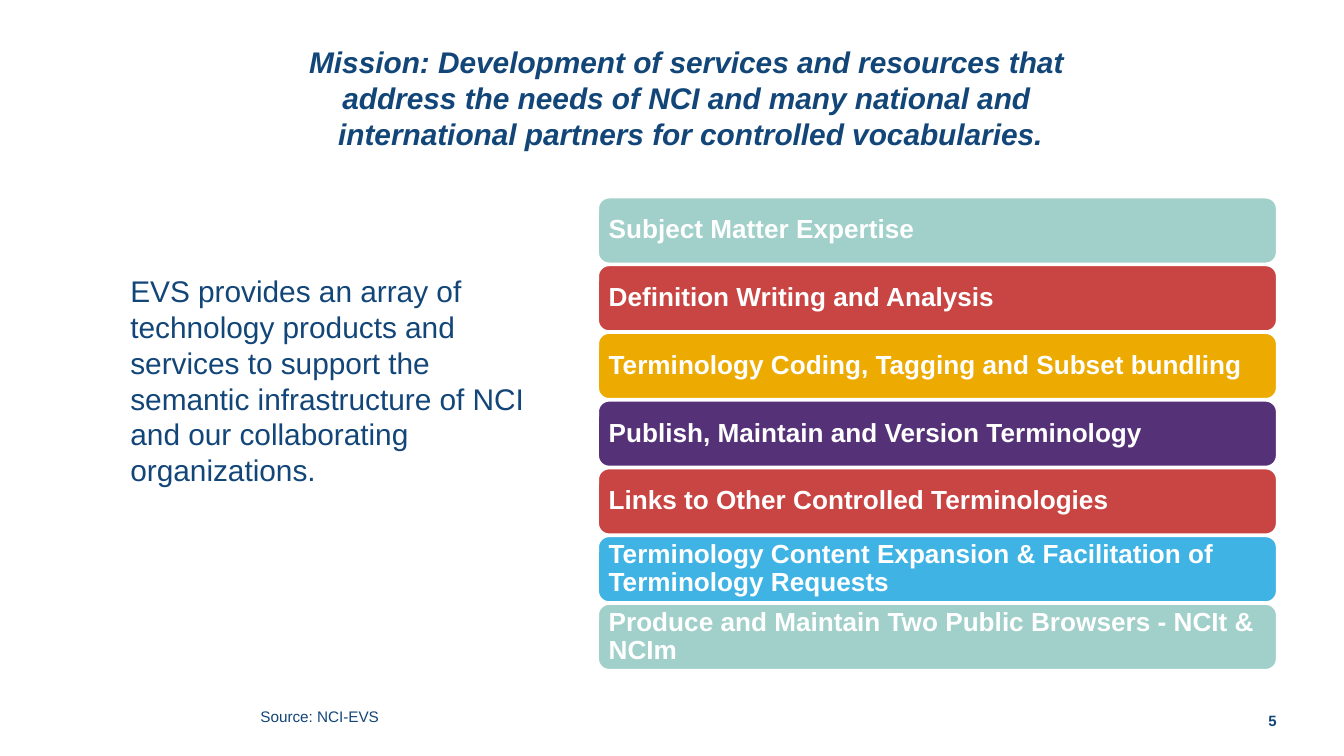
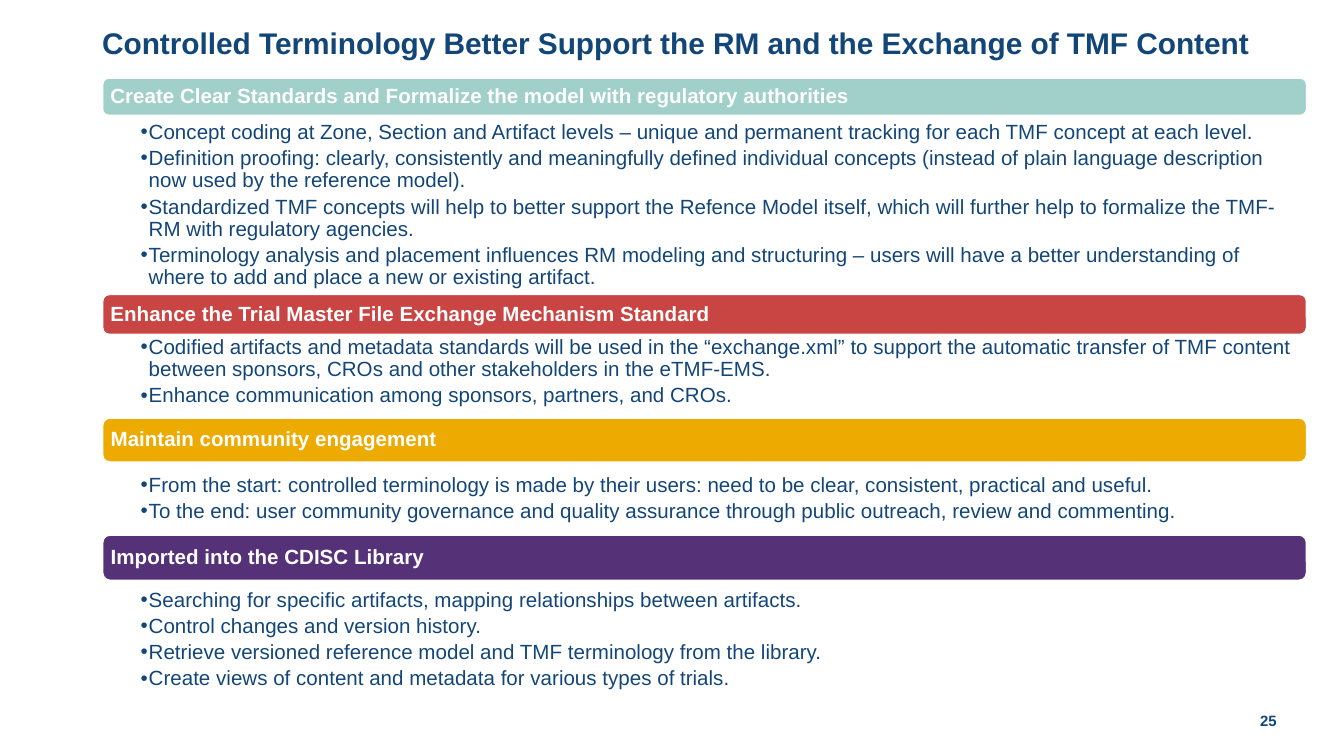
from dataclasses import dataclass

from lxml import etree
from pptx import Presentation
from pptx import util as u
from pptx.dml.color import RGBColor
from pptx.enum import shapes, text
from pptx.oxml.ns import qn

# The slide is a 16:9 grid of square cells, 100 columns wide.
CELL = u.Inches(0.1)
COLUMNS = 100
ROWS = COLUMNS * 9 / 16


@dataclass(frozen=True)
class Theme:
    font: str = "Arial"
    navy: str = "134678"
    white: str = "FFFFFF"
    teal: str = "A1D0CA"
    red: str = "C94543"
    gold: str = "EDAA00"
    purple: str = "553278"
    sky: str = "40B3E5"
    heading_size: float = 16
    service_size: float = 14
    section_size: float = 11
    source_size: float = 8.2
    number_size: float = 8
    tight: float = 0.9


THEME = Theme()

MISSION = [
    "Mission: Development of services and resources that ",
    "address the needs of NCI and many national and ",
    "international partners for controlled vocabularies.",
]
SUMMARY = (
    "EVS provides an array of technology products and services to support the "
    "semantic infrastructure of NCI and our collaborating organizations."
)
SERVICES = [
    ("Subject Matter Expertise", THEME.teal),
    ("Definition Writing and Analysis", THEME.red),
    ("Terminology Coding, Tagging and Subset bundling", THEME.gold),
    ("Publish, Maintain and Version Terminology", THEME.purple),
    ("Links to Other Controlled Terminologies", THEME.red),
    ("Terminology Content Expansion & Facilitation of Terminology Requests", THEME.sky),
    ("Produce and Maintain Two Public Browsers - NCIt & NCIm", THEME.teal),
]


@dataclass(frozen=True)
class Section:
    """A coloured band with a list below it; tops and heights are in rows."""
    heading: str
    color: str
    band_top: float
    band_height: float
    list_top: float
    list_height: float
    points: tuple


SECTIONS = [
    Section(
        "Create Clear Standards and Formalize the model with regulatory authorities",
        THEME.teal, 5.8, 2.8, 8.85, 14.5, (
            "Concept coding at Zone, Section and Artifact levels – unique and permanent "
            "tracking for each TMF concept at each level.",
            "Definition proofing: clearly, consistently and meaningfully defined individual "
            "concepts (instead of plain language description now used by the reference model).",
            "Standardized TMF concepts will help to better support the Refence Model itself, "
            "which will further help to formalize the TMF-RM with regulatory agencies.",
            "Terminology analysis and placement influences RM modeling and structuring – users "
            "will have a better understanding of where to add and place a new or existing "
            "artifact.",
        )),
    Section(
        "Enhance the Trial Master File Exchange Mechanism Standard",
        THEME.red, 21.9, 3, 24.85, 5.4, (
            "Codified artifacts and metadata standards will be used in the “exchange.xml” to "
            "support the automatic transfer of TMF content between sponsors, CROs and other "
            "stakeholders in the eTMF-EMS.",
            "Enhance communication among sponsors, partners, and CROs.",
        )),
    Section(
        "Maintain community engagement",
        THEME.gold, 31.1, 3.3, 35.1, 5.4, (
            "From the start: controlled terminology is made by their users: need to be clear, "
            "consistent, practical and useful.",
            "To the end: user community governance and quality assurance through public "
            "outreach, review and commenting.",
        )),
    Section(
        "Imported into the CDISC Library",
        THEME.purple, 39.8, 3.4, 43.65, 7.8, (
            "Searching for specific artifacts, mapping relationships between artifacts.",
            "Control changes and version history.",
            "Retrieve versioned reference model and TMF terminology from the library.",
            "Create views of content and metadata for various types of trials.",
        )),
]


def cells(*counts):
    return [round(count * CELL) for count in counts]


def place(shape, left, top, width, height):
    shape.left, shape.top, shape.width, shape.height = cells(left, top, width, height)


def prepare_frame(shape, insets=(0, 0, 0, 0), anchor=text.MSO_ANCHOR.MIDDLE, wrap=True):
    """Set insets (left, top, right, bottom, in cells), anchor and wrapping."""
    frame = shape.text_frame
    frame.auto_size = text.MSO_AUTO_SIZE.NONE
    frame.word_wrap = wrap
    frame.vertical_anchor = anchor
    (frame.margin_left, frame.margin_top,
     frame.margin_right, frame.margin_bottom) = cells(*insets)
    return frame


def set_bullet(paragraph, bullet, hang):
    properties = paragraph._p.get_or_add_pPr()
    properties.set("marL", str(hang))
    properties.set("indent", str(-hang))
    if bullet:
        etree.SubElement(properties, qn("a:buChar")).set("char", bullet)
    else:
        etree.SubElement(properties, qn("a:buNone"))


def write(frame, lines, size, color=THEME.navy, bold=False, italic=False,
          align=text.PP_ALIGN.LEFT, spacing=1.0, after=0, bullet=None):
    for index, line in enumerate(lines):
        paragraph = frame.paragraphs[0] if index == 0 else frame.add_paragraph()
        set_bullet(paragraph, bullet, u.Inches(0.06) if bullet else 0)
        paragraph.level = 1 if bullet else 0
        paragraph.alignment = align
        paragraph.line_spacing = spacing
        paragraph.space_before = u.Pt(0)
        paragraph.space_after = u.Pt(after)
        run = paragraph.add_run()
        run.text = line
        font = run.font
        font.name, font.size = THEME.font, u.Pt(size)
        font.bold, font.italic = bold, italic
        font.color.rgb = RGBColor.from_string(color)


def add_band(slide, label, color, bounds, size, inset):
    shape = slide.shapes.add_shape(shapes.MSO_SHAPE.ROUNDED_RECTANGLE, *cells(*bounds))
    shape.shadow.inherit = False
    shape.fill.solid()
    shape.fill.fore_color.rgb = RGBColor.from_string(color)
    shape.line.color.rgb = RGBColor.from_string(THEME.white)
    shape.line.width = u.Pt(1)
    frame = prepare_frame(shape, (inset,) * 4)
    write(frame, [label], size, THEME.white, bold=True, spacing=THEME.tight)


def add_title(slide, lines, bounds, anchor=text.MSO_ANCHOR.MIDDLE, **style):
    place(slide.shapes.title, *bounds)
    frame = prepare_frame(slide.shapes.title, anchor=anchor)
    write(frame, lines, THEME.heading_size, bold=True, **style)


def fill_body(placeholder, lines, bounds, insets, size, **style):
    place(placeholder, *bounds)
    frame = prepare_frame(placeholder, insets, text.MSO_ANCHOR.TOP)
    write(frame, lines, size, **style)


def add_slide_number(slide, number):
    box = slide.shapes.add_textbox(*cells(91.7, 52.1, 3.3, 3))
    write(prepare_frame(box), [number], THEME.number_size, bold=True,
          align=text.PP_ALIGN.RIGHT)


def add_source(slide, source):
    box = slide.shapes.add_textbox(*cells(18.4, 52.1, 11, 2.4))
    frame = prepare_frame(box, (1, 0.5, 1, 0.5), text.MSO_ANCHOR.TOP, wrap=False)
    write(frame, [source], THEME.source_size)


def build_mission(presentation):
    slide = presentation.slides.add_slide(
        presentation.slide_layouts.get_by_name("Title and Content"))
    add_title(slide, MISSION, (8.3, 3.2, 86.2, 8.1), italic=True,
              align=text.PP_ALIGN.CENTER)
    fill_body(slide.placeholders[1], [SUMMARY], (8.7, 19.8, 32.7, 17.2),
              (1, 0.5, 1, 0.5), THEME.heading_size)
    first_top, pitch = 14.7, 5.04
    for index, (label, color) in enumerate(SERVICES):
        bounds = (44.5, first_top + index * pitch, 50.5, 4.9)
        add_band(slide, label, color, bounds, THEME.service_size, 0.55)
    add_source(slide, "Source: NCI-EVS")
    add_slide_number(slide, "5")


def build_benefits(presentation):
    slide = presentation.slides.add_slide(
        presentation.slide_layouts.get_by_name("Comparison"))
    add_title(slide, ["Controlled Terminology Better Support the RM and the Exchange of "
                      "TMF Content"],
              (7.6, 2.15, 90.1, 4.1), text.MSO_ANCHOR.TOP, spacing=THEME.tight)
    left, width = 7.63, 89.6
    bodies = list(slide.placeholders)[1:]
    for section, body in zip(SECTIONS, bodies):
        add_band(slide, section.heading, section.color,
                 (left, section.band_top, width, section.band_height),
                 THEME.section_size, 0.45)
        fill_body(body, section.points,
                  (left, section.list_top, width, section.list_height),
                  (2.84, 0.2, 0.9, 0.2), THEME.section_size,
                  spacing=THEME.tight, after=2.2, bullet="•")
    add_slide_number(slide, "25")


def main():
    presentation = Presentation()
    presentation.slide_width, presentation.slide_height = cells(COLUMNS, ROWS)
    build_mission(presentation)
    build_benefits(presentation)
    presentation.save("out.pptx")


if __name__ == "__main__":
    main()
